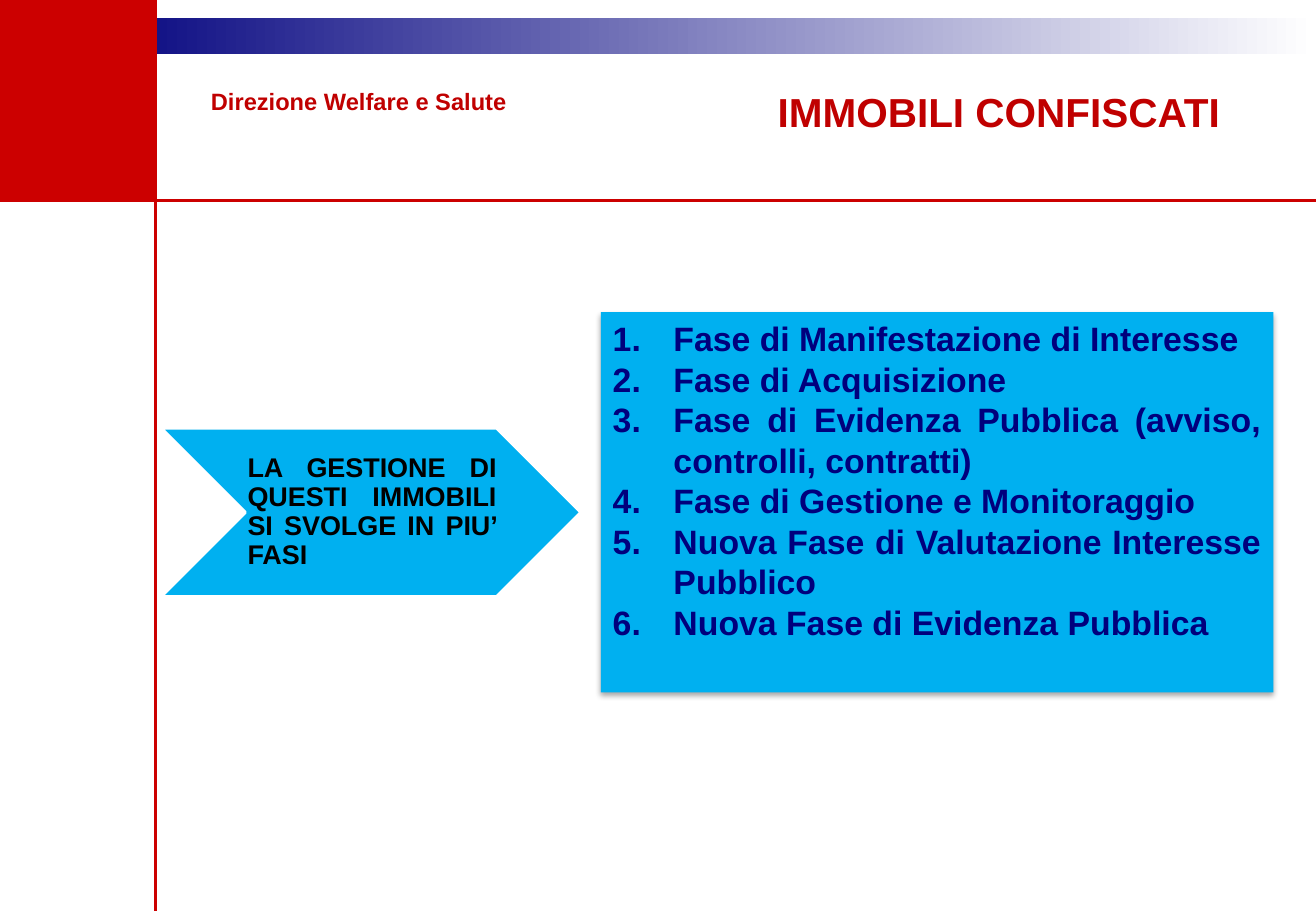
from lxml.etree import SubElement
from pptx import Presentation
from pptx.dml.color import RGBColor
from pptx.enum.shapes import MSO_CONNECTOR, MSO_SHAPE
from pptx.enum.text import MSO_ANCHOR, PP_ALIGN
from pptx.oxml.ns import qn
from pptx.util import Cm, Pt

COLORS = {"red": "CC0000", "dark": "C00000", "navy": "00007D",
          "sky": "00B0F0", "white": "FFFFFF", "black": "000000"}
PHASES = ["Fase di Manifestazione di Interesse",
          "Fase di Acquisizione",
          "Fase di Evidenza Pubblica (avviso, controlli, contratti)",
          "Fase di Gestione e Monitoraggio",
          "Nuova Fase di Valutazione Interesse Pubblico",
          "Nuova Fase di Evidenza Pubblica"]
WIDTH, HEIGHT = 27.51, 19.05


def color(name):
    return RGBColor.from_string(COLORS[name])


def place(shape, box):
    shape.left, shape.top, shape.width, shape.height = map(Cm, box)


def write(shape, lines, size, tone, anchor=MSO_ANCHOR.TOP, number=False):
    frame = shape.text_frame
    frame.word_wrap = True
    frame.vertical_anchor = anchor
    frame.text = "\n".join(lines)
    for para in frame.paragraphs:
        para.alignment = PP_ALIGN.JUSTIFY
        if number:
            props = para._p.get_or_add_pPr()
            props.set("marL", str(Cm(1.27)))
            props.set("indent", str(-Cm(1.27)))
            SubElement(props, qn("a:buFont"), typeface="+mj-lt")
            SubElement(props, qn("a:buAutoNum"), type="arabicPeriod")
        font = para.font
        font.name, font.size, font.bold = "Arial", Pt(size), True
        font.color.rgb = color(tone)
    return frame


def add_form(slide, kind, box, tone):
    shape = slide.shapes.add_shape(kind, *map(Cm, box))
    shape.shadow.inherit = False
    shape.fill.solid()
    shape.fill.fore_color.rgb = color(tone)
    shape.line.fill.background()
    return shape


def add_rule(slide, *ends):
    rule = slide.shapes.add_connector(MSO_CONNECTOR.STRAIGHT, *map(Cm, ends))
    rule.line.color.rgb = color("red")
    rule.line.width = Pt(1.5)
    SubElement(rule._element.spPr, qn("a:effectLst"))


def add_frame(slide, box):
    left, top, width, height = box
    edge, base = left + 3.25, top + 4.19
    band = add_form(slide, MSO_SHAPE.RECTANGLE,
                    (left + 1.24, top + 0.38, width - 1.24, 0.76), "navy")
    band.fill.gradient()
    band.fill.gradient_angle = 0
    for stop, tone, spot in zip(band.fill.gradient_stops,
                                ("navy", "white"), (0, 1)):
        stop.color.rgb = color(tone)
        stop.position = spot
    add_form(slide, MSO_SHAPE.RECTANGLE, (left, top, 3.25, 4.19), "red")
    add_rule(slide, left, base, left + width, base)
    add_rule(slide, edge, top + height, edge, top)


def add_header(slide, box):
    left, top, width, height = box
    office = slide.shapes.add_textbox(*map(Cm, (left, top, 6.81, height)))
    write(office, ["Direzione Welfare e Salute"], 14, "dark")
    title = slide.shapes.title
    place(title, (left + width - 10, top, 10, height))
    write(title, ["IMMOBILI CONFISCATI"], 24, "dark")


def add_arrow(slide, box):
    arrow = add_form(slide, MSO_SHAPE.CHEVRON, box, "sky")
    arrow.line.color.rgb = color("white")
    arrow.line.width = Pt(2)
    frame = write(arrow, ["LA GESTIONE DI QUESTI IMMOBILI SI SVOLGE IN PIU’ FASI"],
                  16, "black", anchor=MSO_ANCHOR.MIDDLE)
    frame.margin_left = Cm(0.05)
    frame.margin_right = Cm(0)
    frame.margin_top = frame.margin_bottom = Cm(0.03)
    frame.paragraphs[0].line_spacing = 0.9


def add_phases(slide, box):
    panel = add_form(slide, MSO_SHAPE.RECTANGLE, box, "sky")
    effects = panel._element.spPr.find(qn("a:effectLst"))
    shadow = SubElement(effects, qn("a:outerShdw"), blurRad=str(Pt(3.1)),
                        dist=str(Pt(1.8)), dir="5400000", rotWithShape="0")
    shade = SubElement(shadow, qn("a:srgbClr"), val=COLORS["black"])
    SubElement(shade, qn("a:alpha"), val="35000")
    write(panel, PHASES, 20, "navy", number=True)


def main():
    deck = Presentation()
    deck.slide_width, deck.slide_height = Cm(WIDTH), Cm(HEIGHT)
    slide = deck.slides.add_slide(deck.slide_layouts[5])
    add_frame(slide, (0, 0, WIDTH, HEIGHT))
    add_header(slide, (4.16, 1.7, 21.84, 1.3))
    add_arrow(slide, (3.36, 8.95, 8.79, 3.53))
    add_phases(slide, (12.56, 6.53, 14.06, 7.95))
    deck.save("out.pptx")


if __name__ == "__main__":
    main()
